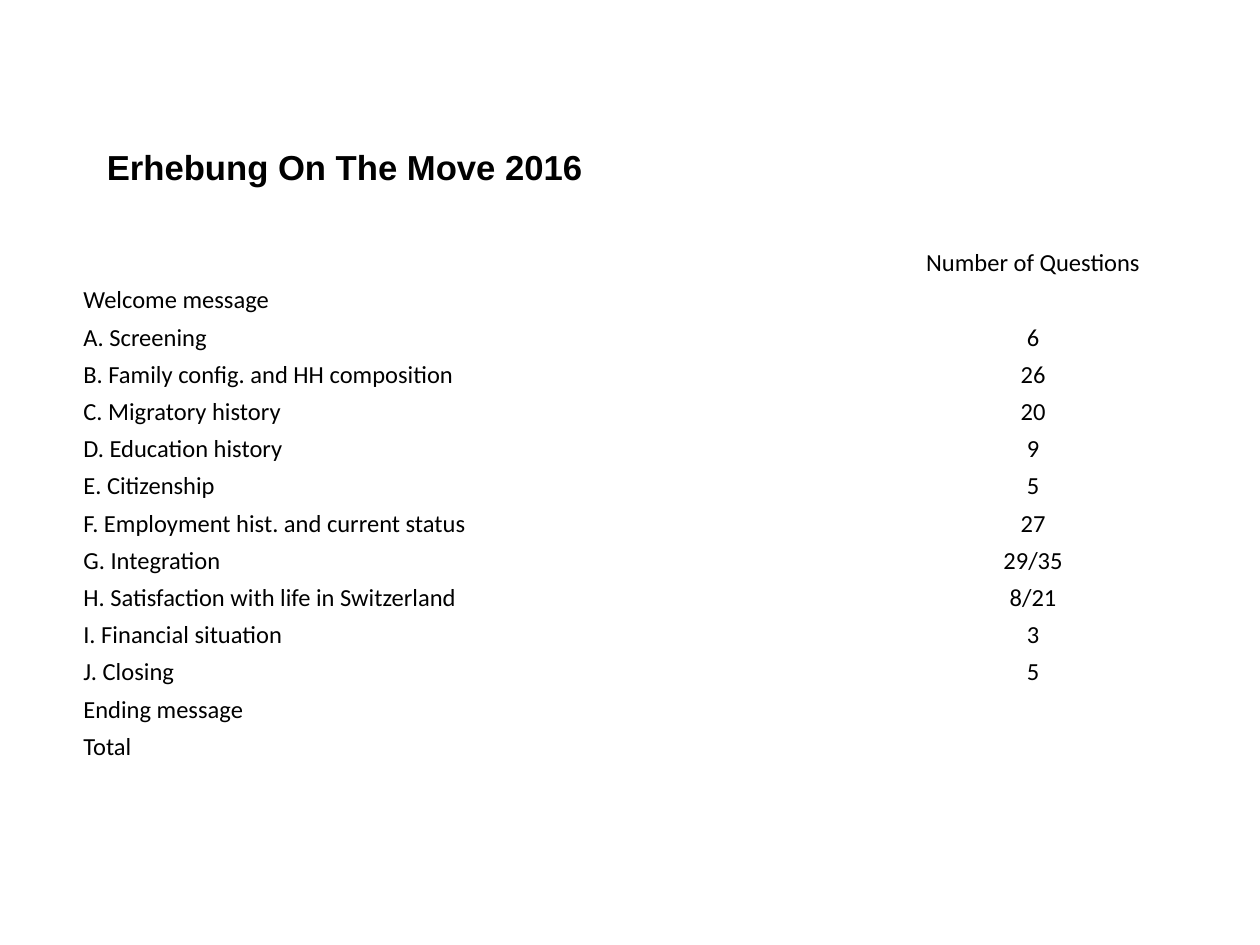
from pptx import Presentation
from pptx import util as u
from pptx.dml.color import RGBColor
from pptx.enum import text

COLOURS = {"text": "000000"}
SECTIONS = [
    ("", "Number of Questions"),
    ("Welcome message", None),  # None: the section spans both columns
    ("A. Screening", "6"),
    ("B. Family config. and HH composition", "26"),
    ("C. Migratory history", "20"),
    ("D. Education history", "9"),
    ("E. Citizenship", "5"),
    ("F. Employment hist. and current status", "27"),
    ("G. Integration", "29/35"),
    ("H. Satisfaction with life in Switzerland", "8/21"),
    ("I. Financial situation", "3"),
    ("J. Closing", "5"),
    ("Ending message", None),
    ("Total", ""),
]
COLUMN_WIDTHS = (u.Cm(16), u.Cm(6.65))
ROW_HEIGHT = u.Cm(0.75)


def format_paragraph(paragraph, font_name, size, align, bold=False):
    paragraph.alignment = align
    for run in paragraph.runs:
        run.font.name = font_name
        run.font.size = u.Pt(size)
        run.font.bold = bold
        run.font.color.rgb = RGBColor.from_string(COLOURS["text"])


def set_title(slide, wording):
    title = slide.shapes.title
    title.left, title.top = u.Cm(1.9), u.Cm(2.72)
    title.width, title.height = u.Cm(22.1), u.Cm(1.6)
    frame = title.text_frame
    frame.text = wording
    frame.word_wrap = True
    frame.auto_size = text.MSO_AUTO_SIZE.NONE
    frame.vertical_anchor = text.MSO_ANCHOR.TOP
    frame.margin_top = u.Cm(0.22)
    format_paragraph(frame.paragraphs[0], "Arial", 19.8, text.PP_ALIGN.LEFT, bold=True)


def fill_cell(cell, wording, align):
    cell.fill.background()
    cell.vertical_anchor = text.MSO_ANCHOR.MIDDLE
    cell.margin_left = cell.margin_right = u.Cm(0.18)
    cell.margin_top = cell.margin_bottom = 0
    cell.text_frame.text = wording
    paragraph = cell.text_frame.paragraphs[0]
    format_paragraph(paragraph, "Calibri", 14, align)
    if not wording:  # keeps an empty cell from stretching its row
        paragraph._p.get_or_add_endParaRPr().set("sz", "1400")


def add_question_table(slide):
    table = slide.shapes.add_table(
        len(SECTIONS), len(COLUMN_WIDTHS), u.Cm(1.5), u.Cm(4.93),
        sum(COLUMN_WIDTHS), ROW_HEIGHT * len(SECTIONS)).table
    table.first_row = table.horz_banding = False
    for column, width in zip(table.columns, COLUMN_WIDTHS):
        column.width = width
    for index, (section, questions) in enumerate(SECTIONS):
        table.rows[index].height = ROW_HEIGHT
        section_cell, count_cell = table.cell(index, 0), table.cell(index, 1)
        fill_cell(section_cell, section, text.PP_ALIGN.LEFT)
        fill_cell(count_cell, questions or "", text.PP_ALIGN.CENTER)
        if questions is None:
            section_cell.merge(count_cell)


def main():
    deck = Presentation()
    deck.slide_width, deck.slide_height = u.Cm(25.4), u.Cm(19.05)
    slide = deck.slides.add_slide(deck.slide_layouts[5])

    # Heading
    set_title(slide, "Erhebung On The Move 2016")

    # Sections of the questionnaire
    add_question_table(slide)

    deck.save("out.pptx")


if __name__ == "__main__":
    main()
